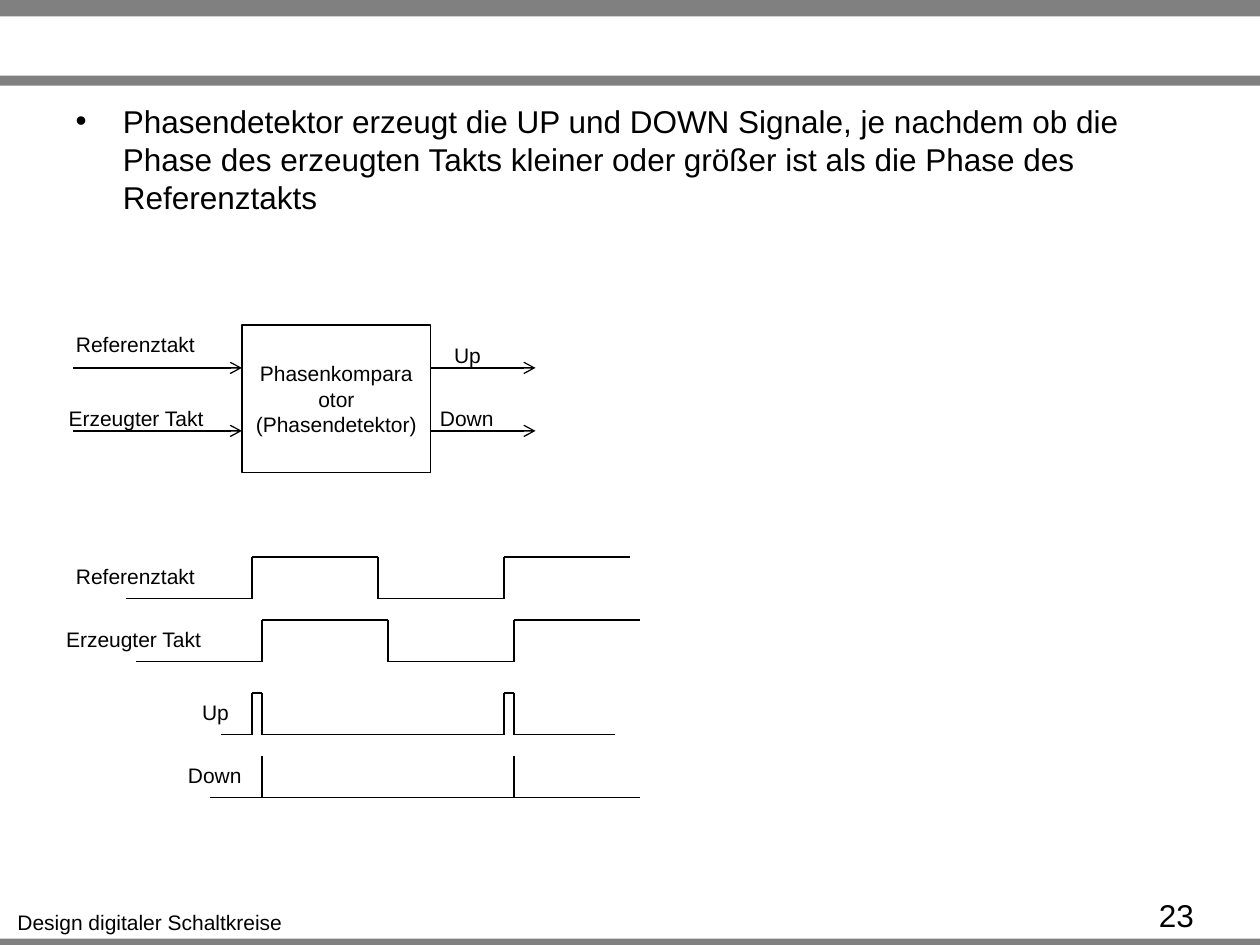
from dataclasses import dataclass
from itertools import pairwise

from lxml.etree import SubElement
from pptx import Presentation
from pptx.dml.color import RGBColor as Rgb
from pptx.enum.shapes import MSO_CONNECTOR as Link, MSO_SHAPE as Shape
from pptx.enum.text import MSO_ANCHOR as Anchor, MSO_AUTO_SIZE as Fit, PP_ALIGN as Align
from pptx.oxml.ns import qn
from pptx.util import Inches, Pt


@dataclass(frozen=True)
class Theme:
    font: str = "Arial"
    ink: Rgb = Rgb(0, 0, 0)
    bar: Rgb = Rgb(128, 128, 128)
    small: int = 12
    large: int = 18
    line: float = 0.75


class Page:
    def __init__(self, slide, theme):
        self.slide = slide
        self.theme = theme

    def fill(self, frame, text, size, align):
        frame.text = text
        for para in frame.paragraphs:
            para.alignment = align
            for run in para.runs:
                run.font.name = self.theme.font
                run.font.size = Pt(size)
                run.font.color.rgb = self.theme.ink

    def bar(self, top, height):
        bar = self.slide.shapes.add_shape(
            Shape.RECTANGLE, 0, Inches(top), Inches(10), Inches(height))
        bar.shadow.inherit = False
        bar.fill.solid()
        bar.fill.fore_color.rgb = self.theme.bar
        bar.line.fill.background()

    def body(self, text, left, top, width, height):
        body = self.slide.placeholders[1]
        body.left, body.top = Inches(left), Inches(top)
        body.width, body.height = Inches(width), Inches(height)
        frame = body.text_frame
        self.fill(frame, text, self.theme.large, Align.LEFT)
        frame.auto_size = Fit.NONE
        frame.paragraphs[0].space_before = Pt(0)

    def block(self, text, left, top, width, height):
        box = self.slide.shapes.add_shape(
            Shape.RECTANGLE, Inches(left), Inches(top), Inches(width), Inches(height))
        box.shadow.inherit = False
        box.fill.background()
        box.line.color.rgb = self.theme.ink
        box.line.width = Pt(self.theme.line)
        box.text_frame.vertical_anchor = Anchor.MIDDLE
        self.fill(box.text_frame, text, self.theme.small, Align.CENTER)

    def label(self, text, left, top, width, height=0.3):
        box = self.slide.shapes.add_textbox(
            Inches(left), Inches(top), Inches(width), Inches(height))
        box.text_frame.word_wrap = False
        box.text_frame.auto_size = Fit.SHAPE_TO_FIT_TEXT
        self.fill(box.text_frame, text, self.theme.small, Align.CENTER)

    def number(self, text, left, top, width, height):
        box = self.slide.shapes.add_textbox(
            Inches(left), Inches(top), Inches(width), Inches(height))
        box.text_frame.word_wrap = True
        self.fill(box.text_frame, text, self.theme.large, Align.LEFT)

    def line(self, start, end, arrow=False):
        line = self.slide.shapes.add_connector(
            Link.STRAIGHT, *(Inches(n) for n in (*start, *end)))
        line.line.color.rgb = self.theme.ink
        line.line.width = Pt(self.theme.line)
        props = line._element.spPr
        if arrow:
            SubElement(props.find(qn("a:ln")), qn("a:tailEnd"), type="arrow")
        SubElement(props, qn("a:effectLst"))

    def trace(self, points):
        for start, end in pairwise(points):
            self.line(start, end)

    def clock(self, left, high, low):
        levels = (low, high, low, high)
        self.trace([(left + step + side, level)
                    for step, level in enumerate(levels) for side in (0, 1)])


def main():
    deck = Presentation()
    deck.slide_width, deck.slide_height = Inches(10), Inches(7.5)
    slide = deck.slides.add_slide(deck.slide_layouts[1])
    title = slide.shapes.title._element
    title.getparent().remove(title)
    page = Page(slide, Theme())

    for top, height in ((7.45, 0.08), (0, 0.13), (0.6, 0.08)):
        page.bar(top, height)
    page.label("Design digitaler Schaltkreise", 0.03, 7.17, 2.32)
    page.body("Phasendetektor erzeugt die UP und DOWN Signale, je nachdem ob die "
              "Phase des erzeugten Takts kleiner oder größer ist als die Phase des "
              "Referenztakts", 0.5, 0.76, 9, 0.99)

    page.block("Phasenkomparaotor\n(Phasendetektor)", 1.92, 2.58, 1.5, 1.17)
    for row in (2.92, 3.42):
        page.line((0.58, row), (1.92, row), arrow=True)
        page.line((3.42, row), (4.25, row), arrow=True)

    for text, left, top, width in (
        ("Referenztakt", 0.5, 2.58, 1.15),
        ("Erzeugter Takt", 0.44, 3.17, 1.28),
        ("Up", 3.5, 2.67, 0.42),
        ("Down", 3.39, 3.17, 0.63),
        ("Referenztakt", 0.5, 4.42, 1.15),
        ("Erzeugter Takt", 0.42, 4.92, 1.28),
        ("Up", 1.5, 5.5, 0.42),
        ("Down", 1.39, 6, 0.63),
    ):
        page.label(text, left, top, width)

    lag = 0.08
    rises = (2, 4)
    page.clock(1, 4.42, 4.75)
    page.clock(1 + lag, 4.92, 5.25)

    high, low = 5.5, 5.83
    pulse = [(1.75, low)]
    for rise in rises:
        pulse += [(rise, low), (rise, high), (rise + lag, high), (rise + lag, low)]
    pulse.insert(5, (2.5, low))
    page.trace(pulse + [(4.88, low)])

    high, low = 6, 6.33
    page.trace([(1.67, low), (4.25, low), (5.08, low)])
    for rise in rises:
        page.line((rise + lag, low), (rise + lag, high))

    page.number("23", 9.1, 7.06, 0.87, 0.24)
    deck.save("out.pptx")


if __name__ == "__main__":
    main()
